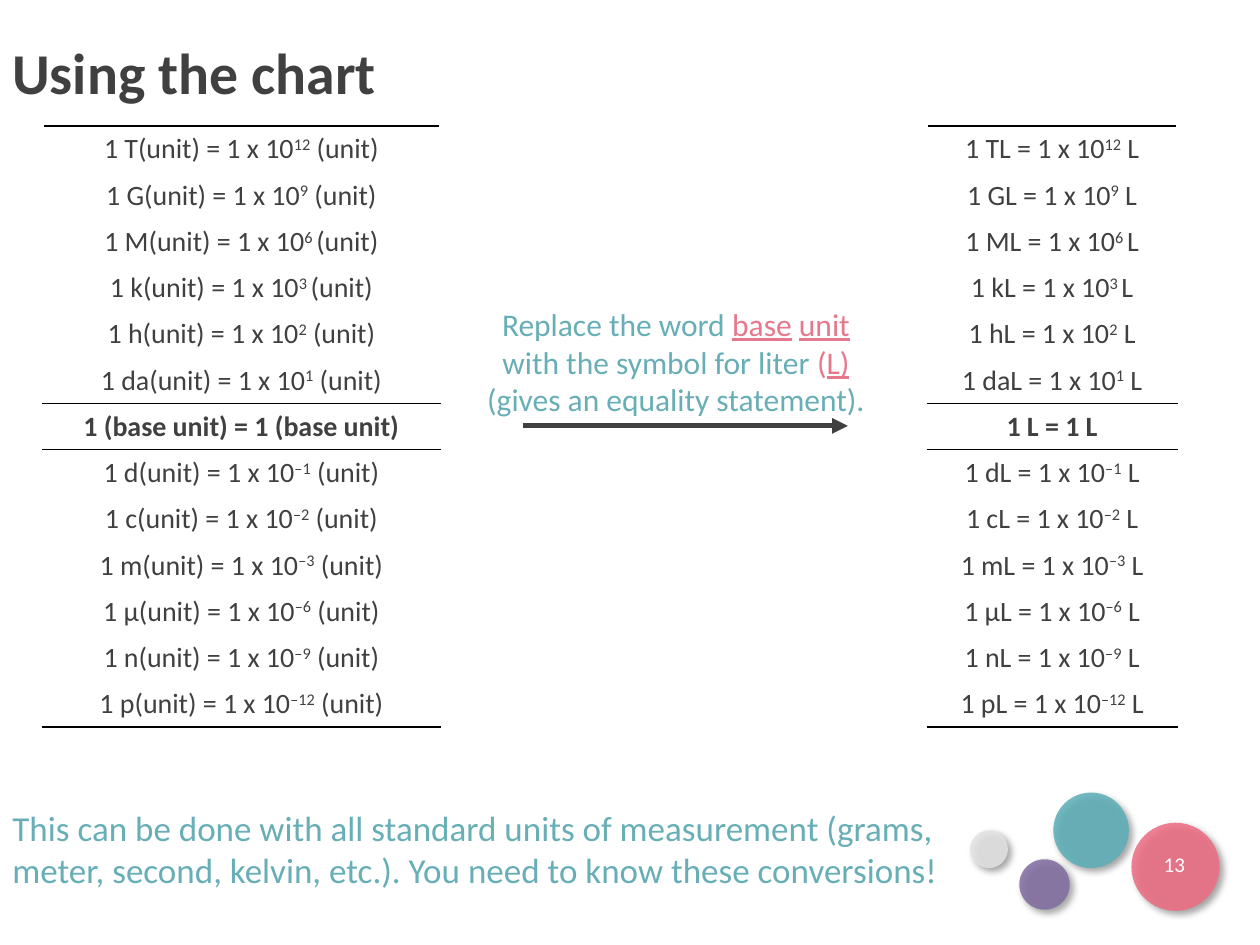
"""Build the slide that turns base unit equalities into liter equalities."""
from lxml import etree
from pptx import Presentation
from pptx.dml.color import RGBColor
from pptx.enum.shapes import MSO_CONNECTOR, MSO_SHAPE
from pptx.enum.text import MSO_ANCHOR, PP_ALIGN
from pptx.oxml import parse_xml
from pptx.oxml.ns import nsdecls, qn
from pptx.util import Inches, Pt

CENTER, LEFT = PP_ALIGN.CENTER, PP_ALIGN.LEFT
MIDDLE, TOP = MSO_ANCHOR.MIDDLE, MSO_ANCHOR.TOP
OVAL, STRAIGHT = MSO_SHAPE.OVAL, MSO_CONNECTOR.STRAIGHT

FONT = "Calibri"
COLORS = {
    "ink": "404040", "teal": "67AEB6", "pink": "E7788B", "rule": "000000", "white": "FFFFFF",
    "gray ball": "E3E3E3", "purple ball": "816DA1", "teal ball": "5CAFB8", "pink ball": "EE6C82",
}
SLIDE_WIDTH, SLIDE_HEIGHT = Inches(10), Inches(7.5)
GRID_COLUMNS, GRID_ROWS = 100, 75

PREFIXES = [
    ("T", "12"), ("G", "9"), ("M", "6 "), ("k", "3 "), ("h", "2"), ("da", "1"),
    None,
    ("d", "–1"), ("c", "–2"), ("m", "–3"), ("μ", "–6"), ("n", "–9"), ("p", "–12"),
]
BASE_ROW = PREFIXES.index(None)
RULES_ABOVE = {0, BASE_ROW, BASE_ROW + 1}
RULES_BELOW = {BASE_ROW - 1, BASE_ROW, len(PREFIXES) - 1}
TABLES = [
    {"box": (3.4, 10, 31.5, 47.7), "unit": "(unit)", "base": "(base unit)"},
    {"box": (73.6, 10, 19.8, 47.7), "unit": "L", "base": "L"},
]
BALLS = [
    ("gray ball", 77, 65.9, 3), ("purple ball", 80.9, 68.2, 4),
    ("teal ball", 83.6, 62.9, 6), ("pink ball", 89.8, 65.3, 7),
]
PLAIN, MARKED = {"color": "teal"}, {"color": "pink", "underline": True}
TEXTS = [
    {"box": (91.3, 66.6, 3.8, 4), "size": 12, "align": CENTER, "anchor": MIDDLE, "wrap": False,
     "runs": [("13", {"color": "white"})]},
    {"box": (0, 63.5, 79.8, 7.7), "size": 20,
     "runs": [("This can be done with all standard units of measurement (grams, meter, second, "
               "kelvin, etc.). You need to know these conversions!", PLAIN)]},
    {"box": (0, 3, 90.3, 6), "size": 33, "anchor": MIDDLE, "spacing": 0.9,
     "runs": [("Using the chart", {"bold": True})]},
    {"box": (36.8, 23.7, 33.7, 10.1), "size": 18, "align": CENTER,
     "runs": [("Replace the word ", PLAIN), ("base", MARKED), (" ", PLAIN), ("unit", MARKED),
              (" with the symbol for liter ", PLAIN), ("(", {"color": "pink"}), ("L)", MARKED),
              (" (gives an equality statement).", PLAIN)]},
]
ARROW = (41.5, 33.8, 67.3, 33.8)


def place(*lengths):
    steps = (SLIDE_WIDTH / GRID_COLUMNS, SLIDE_HEIGHT / GRID_ROWS)
    return [round(length * steps[index % 2]) for index, length in enumerate(lengths)]


def rgb(name):
    return RGBColor.from_string(COLORS[name])


def add_run(paragraph, text, size, color="ink", bold=False, underline=False, raised=False):
    run = paragraph.add_run()
    run.text = text
    font = run.font
    font.name, font.size, font.bold, font.underline = FONT, Pt(size), bold, underline
    font.color.rgb = rgb(color)
    if raised:
        run._r.get_or_add_rPr().set("baseline", "30000")


def add_ball(slide, color, left, top, size):
    ball = slide.shapes.add_shape(OVAL, *place(left, top, size, size))
    ball.fill.solid()
    ball.fill.fore_color.rgb = rgb(color)
    ball.line.fill.background()
    fill_color = ball.fill._xPr.find(qn("a:solidFill"))[0]
    etree.SubElement(fill_color, qn("a:alpha"), val="86000")
    ball._element.spPr.append(parse_xml(
        f'<a:effectLst {nsdecls("a")}><a:outerShdw blurRad="{Pt(4)}" dist="{Pt(3)}" dir="2700000">'
        f'<a:srgbClr val="{COLORS["rule"]}"><a:alpha val="40000"/></a:srgbClr>'
        '</a:outerShdw></a:effectLst>'))
    return ball


def add_text(slide, item):
    frame = slide.shapes.add_textbox(*place(*item["box"])).text_frame
    frame.word_wrap = item.get("wrap", True)
    frame.vertical_anchor = item.get("anchor", TOP)
    paragraph = frame.paragraphs[0]
    paragraph.alignment = item.get("align", LEFT)
    paragraph.line_spacing = item.get("spacing", 1.0)
    for text, style in item["runs"]:
        add_run(paragraph, text, item["size"], **style)


def add_rules(cell, row):
    sides = [("lnT", row in RULES_ABOVE), ("lnB", row in RULES_BELOW)]
    borders = [side for side, shown in sides if shown]
    for index, side in enumerate(borders):
        cell._tc.get_or_add_tcPr().insert(index, parse_xml(
            f'<a:{side} {nsdecls("a")} w="{Pt(1)}"><a:solidFill>'
            f'<a:srgbClr val="{COLORS["rule"]}"/></a:solidFill></a:{side}>'))


def add_equalities(slide, item):
    left, top, width, height = place(*item["box"])
    table = slide.shapes.add_table(len(PREFIXES), 1, left, top, width, height).table
    table.first_row = table.horz_banding = False
    for row, prefix in enumerate(PREFIXES):
        cell = table.cell(row, 0)
        cell.fill.background()
        cell.vertical_anchor = MIDDLE
        add_rules(cell, row)
        paragraph = cell.text_frame.paragraphs[0]
        paragraph.alignment = CENTER
        if prefix is None:
            add_run(paragraph, f"1 {item['base']} = 1 {item['base']}", 16, bold=True)
            continue
        symbol, exponent = prefix
        gap = "" if exponent.endswith(" ") else " "
        add_run(paragraph, f"1 {symbol}{item['unit']} = 1 x 10", 16)
        add_run(paragraph, exponent, 16, raised=True)
        add_run(paragraph, gap + item["unit"], 16)


def add_arrow(slide):
    arrow = slide.shapes.add_connector(STRAIGHT, *place(*ARROW))
    arrow.line.color.rgb = rgb("ink")
    arrow.line.width = Pt(3)
    etree.SubElement(arrow.line._get_or_add_ln(), qn("a:tailEnd"), type="triangle")
    etree.SubElement(arrow._element.spPr, qn("a:effectLst"))


def main():
    presentation = Presentation()
    presentation.slide_width, presentation.slide_height = SLIDE_WIDTH, SLIDE_HEIGHT
    slide = presentation.slides.add_slide(presentation.slide_layouts[6])
    balls = [add_ball(slide, *ball) for ball in BALLS]
    balls[0].rotation = 2.8
    for item in TEXTS:
        add_text(slide, item)
    for item in TABLES:
        add_equalities(slide, item)
    add_arrow(slide)
    presentation.save("out.pptx")


if __name__ == "__main__":
    main()
